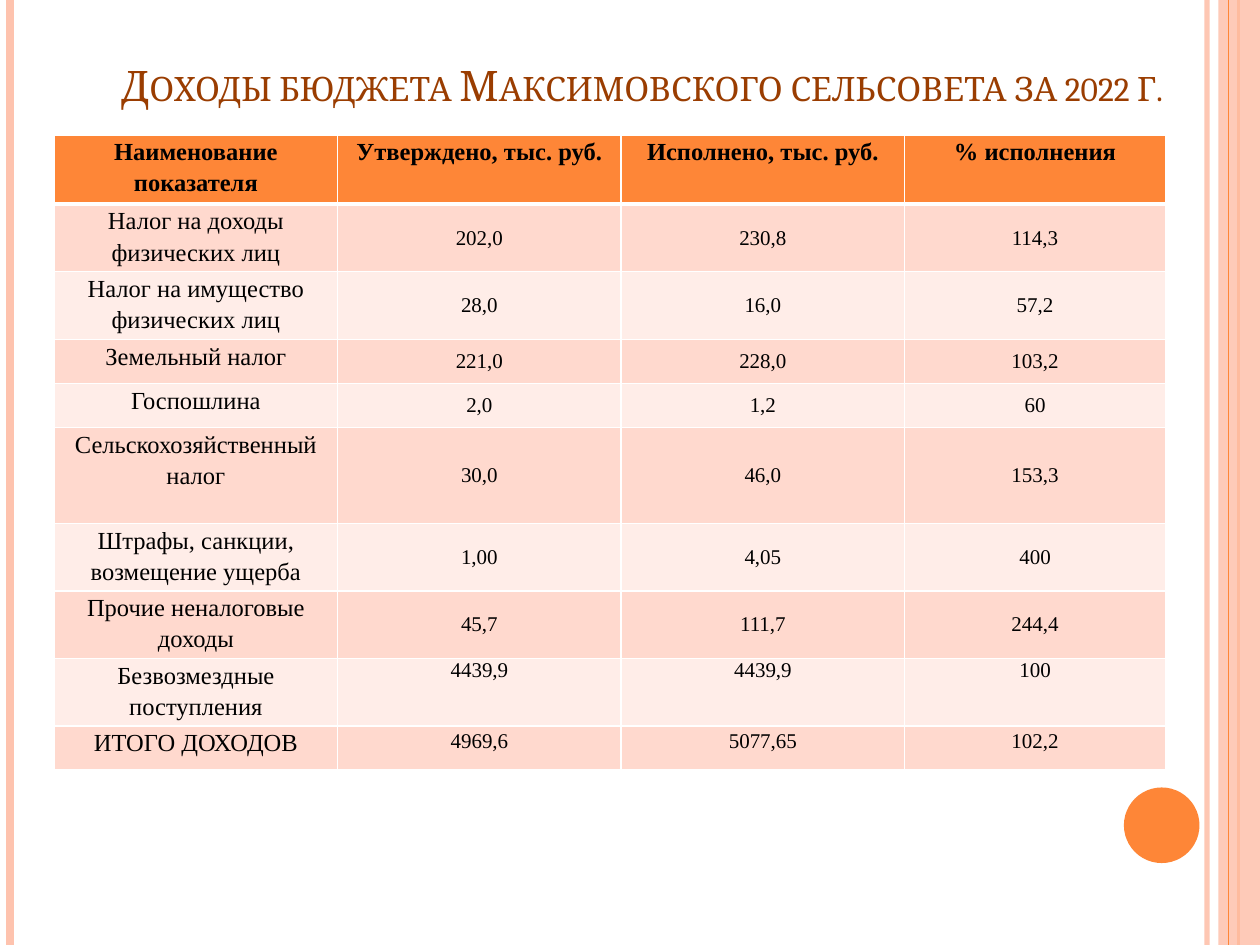
import dataclasses

import lxml.etree
import pptx
import pptx.dml.color
import pptx.enum.shapes
import pptx.enum.text
import pptx.oxml
import pptx.oxml.ns
import pptx.slide
import pptx.util

RGBColor = pptx.dml.color.RGBColor
WHITE = RGBColor(0xFF, 0xFF, 0xFF)
BLACK = RGBColor(0, 0, 0)
ORANGE = RGBColor(0xFE, 0x86, 0x37)
PINK = RGBColor(0xFE, 0xC3, 0xAE)
BROWN = RGBColor(0x9A, 0x3D, 0x01)
BANDS = (RGBColor(0xFF, 0xD9, 0xCE), RGBColor(0xFF, 0xED, 0xE8))

SLIDE_COLUMNS, SLIDE_ROWS = 100, 75
UNIT = pptx.util.Inches(0.1)
TOP = pptx.enum.text.MSO_ANCHOR.TOP
MIDDLE = pptx.enum.text.MSO_ANCHOR.MIDDLE

HEADINGS = ("Наименование показателя", "Утверждено, тыс. руб.", "Исполнено, тыс. руб.", "% исполнения")
INCOME = (
    (5, MIDDLE, 1, ("Налог на доходы физических лиц", "202,0", "230,8", "114,3")),
    (5, MIDDLE, 1, ("Налог на имущество физических лиц", "28,0", "16,0", "57,2")),
    (3.5, MIDDLE, 1, ("Земельный налог", "221,0", "228,0", "103,2")),
    (3.5, MIDDLE, 1, ("Госпошлина", "2,0", "1,2", "60")),
    (7.6, MIDDLE, 1, ("Сельскохозяйственный налог", "30,0", "46,0", "153,3")),
    (5, MIDDLE, 1, ("Штрафы, санкции, возмещение ущерба", "1,00", "4,05", "400")),
    (5, MIDDLE, 1, ("Прочие неналоговые доходы", "45,7", "111,7", "244,4")),
    (5, TOP, 1, ("Безвозмездные поступления", "4439,9", "4439,9", "100")),
    (3.5, TOP, 1.15, ("ИТОГО ДОХОДОВ", "4969,6", "5077,65", "102,2")),
)


@dataclasses.dataclass
class SlideBuilder:
    """Draw styled elements on one slide, measured in grid columns and rows."""

    slide: pptx.slide.Slide
    title_font: str = "Cambria"
    table_font: str = "Times New Roman"
    line_spacing: float = 1.15
    cell_margin: float = 0.7

    def length(self, units):
        return round(units * UNIT)

    def box(self, *units):
        return [self.length(value) for value in units]

    def set_opacity(self, element, percent):
        for color in element.iter(pptx.oxml.ns.qn("a:srgbClr")):
            alpha = lxml.etree.SubElement(color, pptx.oxml.ns.qn("a:alpha"))
            alpha.set("val", str(percent * 1000))

    def stripe(self, column, color, width, opacity=100):
        connector = self.slide.shapes.add_connector(
            pptx.enum.shapes.MSO_CONNECTOR.STRAIGHT, *self.box(column, 0, column, SLIDE_ROWS)
        )
        connector.line.color.rgb = color
        connector.line.width = pptx.util.Pt(width)
        properties = connector._element.spPr
        lxml.etree.SubElement(properties, pptx.oxml.ns.qn("a:effectLst"))
        if opacity < 100:
            self.set_opacity(properties, opacity)

    def shape(self, kind, box, color, opacity=100):
        shape = self.slide.shapes.add_shape(kind, *self.box(*box))
        shape.shadow.inherit = False
        shape.fill.solid()
        shape.fill.fore_color.rgb = color
        shape.line.fill.background()
        if opacity < 100:
            self.set_opacity(shape._element.spPr, opacity)

    def add_text(self, frame, text, font, size, color, bold=False, spacing=None):
        paragraph = frame.paragraphs[0]
        paragraph.alignment = pptx.enum.text.PP_ALIGN.CENTER
        paragraph.line_spacing = spacing
        run = paragraph.add_run()
        run.text = text
        run.font.name = font
        run.font.size = pptx.util.Pt(size)
        run.font.bold = bold
        run.font.color.rgb = color
        return run

    def title(self, text, box):
        frame = self.slide.shapes.add_textbox(*self.box(*box)).text_frame
        frame.word_wrap = True
        frame.vertical_anchor = pptx.enum.text.MSO_ANCHOR.BOTTOM
        run = self.add_text(frame, text, self.title_font, 24, BROWN)
        run.font._element.set("cap", "small")

    def border(self, cell, widths):
        properties = cell._tc.get_or_add_tcPr()
        namespace = pptx.oxml.ns.nsdecls("a")
        for side, width in zip("LRTB", widths):
            properties.append(pptx.oxml.parse_xml(
                f'<a:ln{side} {namespace} w="{pptx.util.Pt(width)}"><a:solidFill>'
                f'<a:srgbClr val="{WHITE}"/></a:solidFill></a:ln{side}>'
            ))

    def cell(self, cell, text, size, fill, widths, anchor=TOP, bold=False, spacing=None):
        self.border(cell, widths)
        cell.fill.solid()
        cell.fill.fore_color.rgb = fill
        cell.vertical_anchor = anchor
        cell.margin_top = cell.margin_bottom = 0
        margin = 0 if anchor == MIDDLE else self.cell_margin
        cell.margin_left = cell.margin_right = self.length(margin)
        self.add_text(cell.text_frame, text, self.table_font, size, BLACK, bold, spacing)

    def income_table(self, left, top, widths, header_height):
        heights = [header_height] + [row[0] for row in INCOME]
        table = self.slide.shapes.add_table(
            len(heights), len(widths), *self.box(left, top, sum(widths), sum(heights))
        ).table
        for column, width in zip(table.columns, widths):
            column.width = self.length(width)
        for row, height in zip(table.rows, heights):
            row.height = self.length(height)
        for column, heading in enumerate(HEADINGS):
            self.cell(table.cell(0, column), heading, 14, ORANGE, (1, 1, 1, 3),
                      bold=True, spacing=self.line_spacing)
        for row, (_, anchor, spacing, texts) in enumerate(INCOME, 1):
            fill = BANDS[(row - 1) % 2]
            borders = (1, 1, 3 if row == 1 else 1, 1)
            self.cell(table.cell(row, 0), texts[0], 14, fill, borders, spacing=self.line_spacing)
            for column, text in enumerate(texts[1:], 1):
                self.cell(table.cell(row, column), text, 12, fill, borders, anchor, spacing=spacing)


def main():
    presentation = pptx.Presentation()
    presentation.slide_width = SLIDE_COLUMNS * UNIT
    presentation.slide_height = SLIDE_ROWS * UNIT
    builder = SlideBuilder(presentation.slides.add_slide(presentation.slide_layouts[6]))
    shapes = pptx.enum.shapes.MSO_SHAPE
    builder.stripe(95.8, PINK, 3, 93)
    builder.stripe(0.8, PINK, 4.5)
    builder.stripe(98.3, ORANGE, 1.5)
    builder.shape(shapes.RECTANGLE, (96.7, 0, 3.3, SLIDE_ROWS), PINK, 87)
    builder.stripe(97.5, ORANGE, 0.75)
    builder.shape(shapes.OVAL, (89.2, 62.5, 6, 6), ORANGE)
    builder.title("Доходы бюджета Максимовского сельсовета за 2022 г.", (5, 3.5, 91.9, 5.7))
    builder.income_table(4.3, 10.7, (22.5, 22.5, 22.5, 20.7), 5.5)
    presentation.save("out.pptx")


if __name__ == "__main__":
    main()
